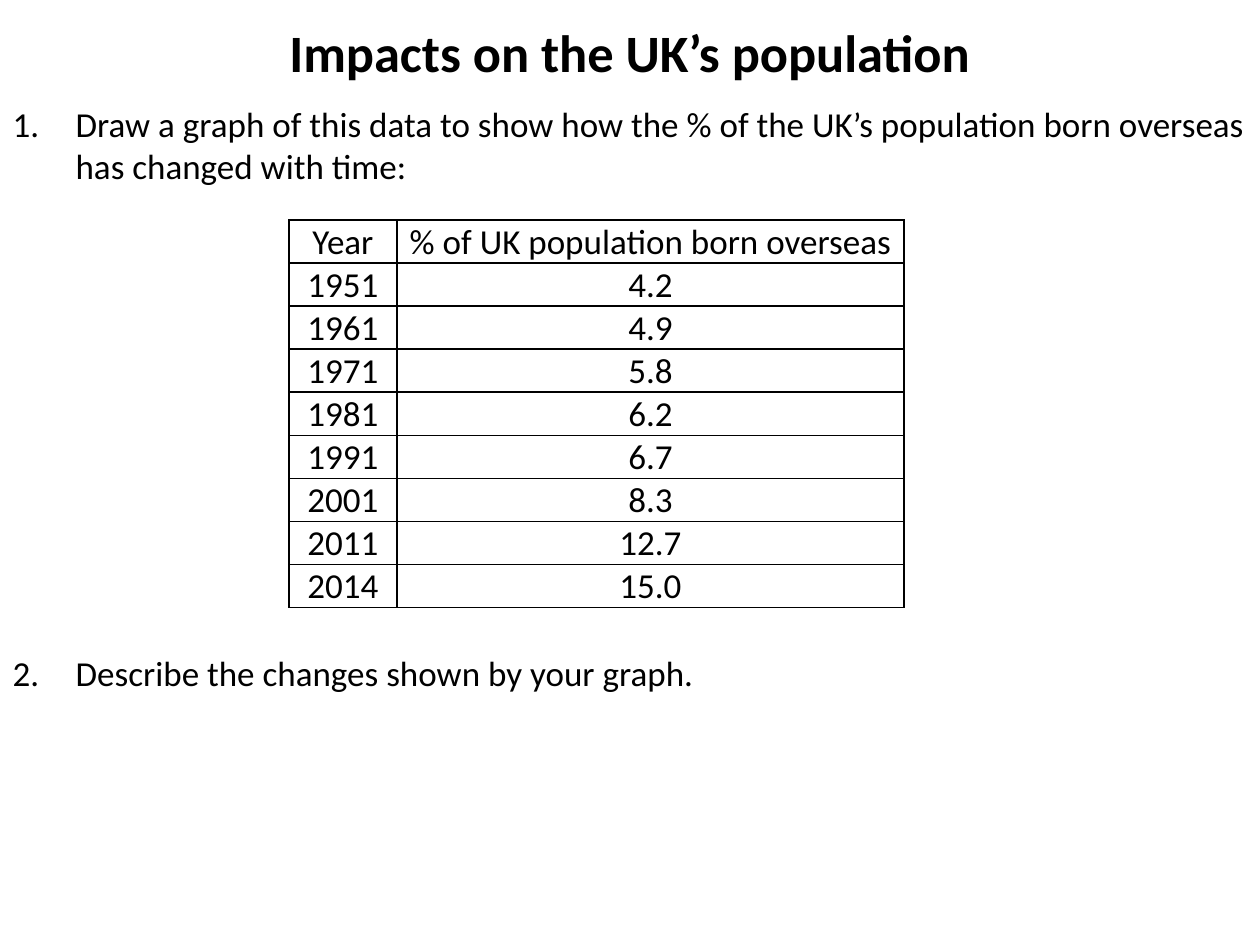
"""Build a slide about the share of the UK's population born overseas."""
from lxml.etree import SubElement
from pptx import Presentation
from pptx.dml.color import RGBColor
from pptx.enum.text import MSO_ANCHOR as Anchor, MSO_AUTO_SIZE as AutoSize, PP_ALIGN as Align
from pptx.oxml.ns import qn
from pptx.util import Emu, Pt

TITLE = "Impacts on the UK’s population"
TASKS = [
    ("Draw a graph of this data to show how the % of the UK’s population born overseas "
     "has changed with time:", (0, 96, 1260, 97)),
    ("Describe the changes shown by your graph.", (0, 645, 1260, 55)),
]
ROWS = [
    ("Year", "% of UK population born overseas"),
    ("1951", "4.2"),
    ("1961", "4.9"),
    ("1971", "5.8"),
    ("1981", "6.2"),
    ("1991", "6.7"),
    ("2001", "8.3"),
    ("2011", "12.7"),
    ("2014", "15.0"),
]
TITLE_BOX = (0, 13, 1260, 77)
TABLE_LEFT, TABLE_TOP, ROW_HEIGHT = 289, 220, 43
COLUMN_WIDTHS = (108, 507)
INDENT = 63

BLACK = RGBColor(0, 0, 0)
TITLE_FONT = {"name": "Calibri", "size": Pt(30), "bold": True}
TEXT_FONT = {"name": "Calibri", "size": Pt(20), "bold": False}
TASK_FORMAT = {"alignment": Align.LEFT, "space_before": Pt(0), "space_after": Pt(6)}
CENTRED = {"alignment": Align.CENTER, "space_before": Pt(0)}


def px(value):
    return Emu(round(value * 914400 / 126))


def set_all(target, values):
    for name, value in values.items():
        setattr(target, name, value)


def write(text_frame, text, font, layout):
    text_frame.text = text
    paragraph = text_frame.paragraphs[0]
    set_all(paragraph, layout)
    set_all(paragraph.runs[0].font, font)
    paragraph.runs[0].font.color.rgb = BLACK
    return paragraph


def fill_placeholder(shape, box, text, font, layout):
    set_all(shape, dict(zip(("left", "top", "width", "height"), map(px, box))))
    set_all(shape.text_frame, {"word_wrap": True, "auto_size": AutoSize.SHAPE_TO_FIT_TEXT})
    return write(shape.text_frame, text, font, layout)


def number(paragraph, start):
    properties = paragraph._p.get_or_add_pPr()
    properties.set("marL", str(px(INDENT)))
    properties.set("indent", str(-px(INDENT)))
    SubElement(properties, qn("a:buFont"), typeface="+mj-lt")
    SubElement(properties, qn("a:buAutoNum"), type="arabicPeriod", startAt=str(start))


def add_borders(cell):
    properties = cell._tc.get_or_add_tcPr()
    for side in ("a:lnL", "a:lnR", "a:lnT", "a:lnB"):
        line = SubElement(properties, qn(side), w=str(Pt(1)))
        SubElement(SubElement(line, qn("a:solidFill")), qn("a:srgbClr"), val=str(BLACK))


def add_data_table(slide):
    frame = slide.shapes.add_table(
        len(ROWS), len(COLUMN_WIDTHS), px(TABLE_LEFT), px(TABLE_TOP),
        px(sum(COLUMN_WIDTHS)), px(ROW_HEIGHT * len(ROWS)))
    table = frame.table
    set_all(table, {"first_row": False, "horz_banding": False})
    for column, width in zip(table.columns, COLUMN_WIDTHS):
        column.width = px(width)
    cell_format = {"vertical_anchor": Anchor.BOTTOM, "margin_left": px(1),
                   "margin_right": px(1), "margin_top": px(1), "margin_bottom": 0}
    for row, values in zip(table.rows, ROWS):
        row.height = px(ROW_HEIGHT)
        for cell, value in zip(row.cells, values):
            set_all(cell, cell_format)
            write(cell.text_frame, value, TEXT_FONT, CENTRED)
            add_borders(cell)
            cell.fill.background()


def main():
    presentation = Presentation()
    set_all(presentation, {"slide_width": px(1260), "slide_height": px(945)})
    slide = presentation.slides.add_slide(presentation.slide_layouts.get_by_name("Two Content"))
    title, *bodies = slide.placeholders
    fill_placeholder(title, TITLE_BOX, TITLE, TITLE_FONT, CENTRED)
    for start, (body, (text, box)) in enumerate(zip(bodies, TASKS), 1):
        number(fill_placeholder(body, box, text, TEXT_FONT, TASK_FORMAT), start)
    add_data_table(slide)
    presentation.save("out.pptx")


if __name__ == "__main__":
    main()
